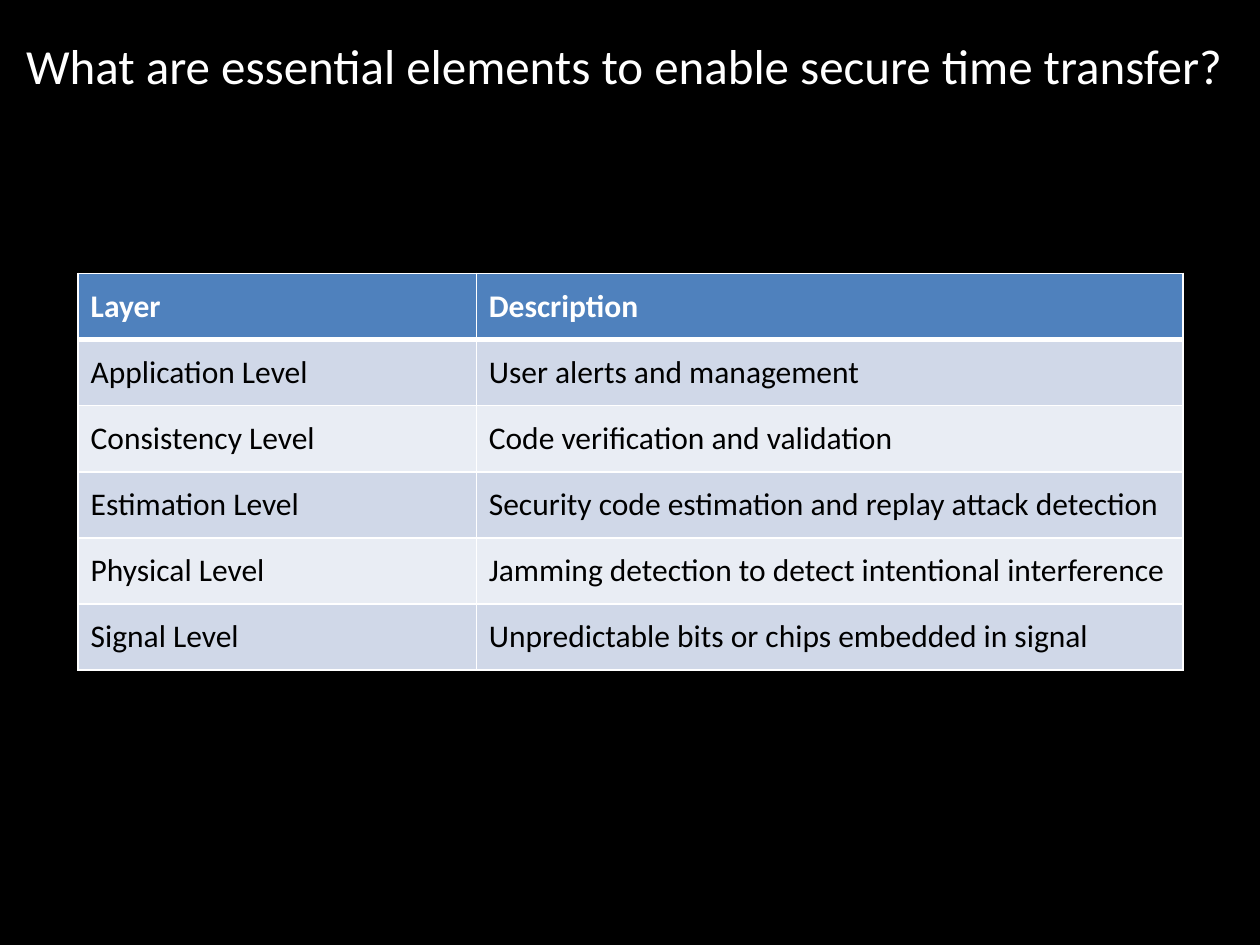
"""Build a slide listing the layers that enable secure time transfer."""
import pptx
import pptx.dml.color
import pptx.enum.text
import pptx.oxml
import pptx.oxml.ns
import pptx.util
from pptx.util import Inches

FONT = "Calibri"
COLORS = {
    "background": "000000",
    "light": "FFFFFF",
    "dark": "000000",
    "header": "4F81BD",
    "odd": "D0D8E8",
    "even": "E9EDF4",
}
TITLE = "What are essential elements to enable secure time transfer?"
ROWS = [
    ("Layer", "Description"),
    ("Application Level", "User alerts and management"),
    ("Consistency Level", "Code verification and validation"),
    ("Estimation Level", "Security code estimation and replay attack detection"),
    ("Physical Level", "Jamming detection to detect intentional interference"),
    ("Signal Level", "Unpredictable bits or chips embedded in signal"),
]
COL_WIDTHS = (3.16, 5.61)
ROW_HEIGHT = 0.525


def rgb(name):
    return pptx.dml.color.RGBColor.from_string(COLORS[name])


def set_fill(fill, color):
    fill.solid()
    fill.fore_color.rgb = rgb(color)


def add_run(p, text, size, color, bold=False):
    r = p.add_run()
    r.text = text
    r.font.name = FONT
    r.font.size = pptx.util.Pt(size)
    r.font.bold = bold
    r.font.color.rgb = rgb(color)


def add_title(s, text):
    sp = s.shapes.add_textbox(Inches(0.11), Inches(0.23), Inches(9.8), Inches(0.57))
    tf = sp.text_frame
    tf.word_wrap = False
    tf.auto_size = pptx.enum.text.MSO_AUTO_SIZE.SHAPE_TO_FIT_TEXT
    add_run(tf.paragraphs[0], text, 28, "light")


def set_borders(cell, widths):
    tc_pr = cell._tc.get_or_add_tcPr()
    for side, width in widths.items():
        tc_pr.append(pptx.oxml.parse_xml(
            f'<a:ln{side} {pptx.oxml.ns.nsdecls("a")} w="{pptx.util.Pt(width)}">'
            f'<a:solidFill><a:srgbClr val="{COLORS["light"]}"/></a:solidFill>'
            f'</a:ln{side}>'))


def fill_cell(cell, text, row):
    header = row == 0
    set_borders(cell, {"L": 1, "R": 1, "T": 3 if row == 1 else 1, "B": 3 if header else 1})
    set_fill(cell.fill, "header" if header else "odd" if row % 2 else "even")
    cell.vertical_anchor = pptx.enum.text.MSO_ANCHOR.MIDDLE
    add_run(cell.text_frame.paragraphs[0], text, 18, "light" if header else "dark", header)


def add_layer_table(s, rows):
    table = s.shapes.add_table(
        len(rows), len(COL_WIDTHS), Inches(0.62), Inches(2.17),
        Inches(sum(COL_WIDTHS)), Inches(ROW_HEIGHT * len(rows))).table
    for column, width in zip(table.columns, COL_WIDTHS):
        column.width = Inches(width)
    for i, texts in enumerate(rows):
        table.rows[i].height = Inches(ROW_HEIGHT)
        for j, text in enumerate(texts):
            fill_cell(table.cell(i, j), text, i)


def main():
    prs = pptx.Presentation()
    prs.slide_width, prs.slide_height = Inches(10), Inches(7.5)
    s = prs.slides.add_slide(prs.slide_layouts[6])
    set_fill(s.background.fill, "background")
    add_title(s, TITLE)
    add_layer_table(s, ROWS)
    prs.save("out.pptx")


if __name__ == "__main__":
    main()
